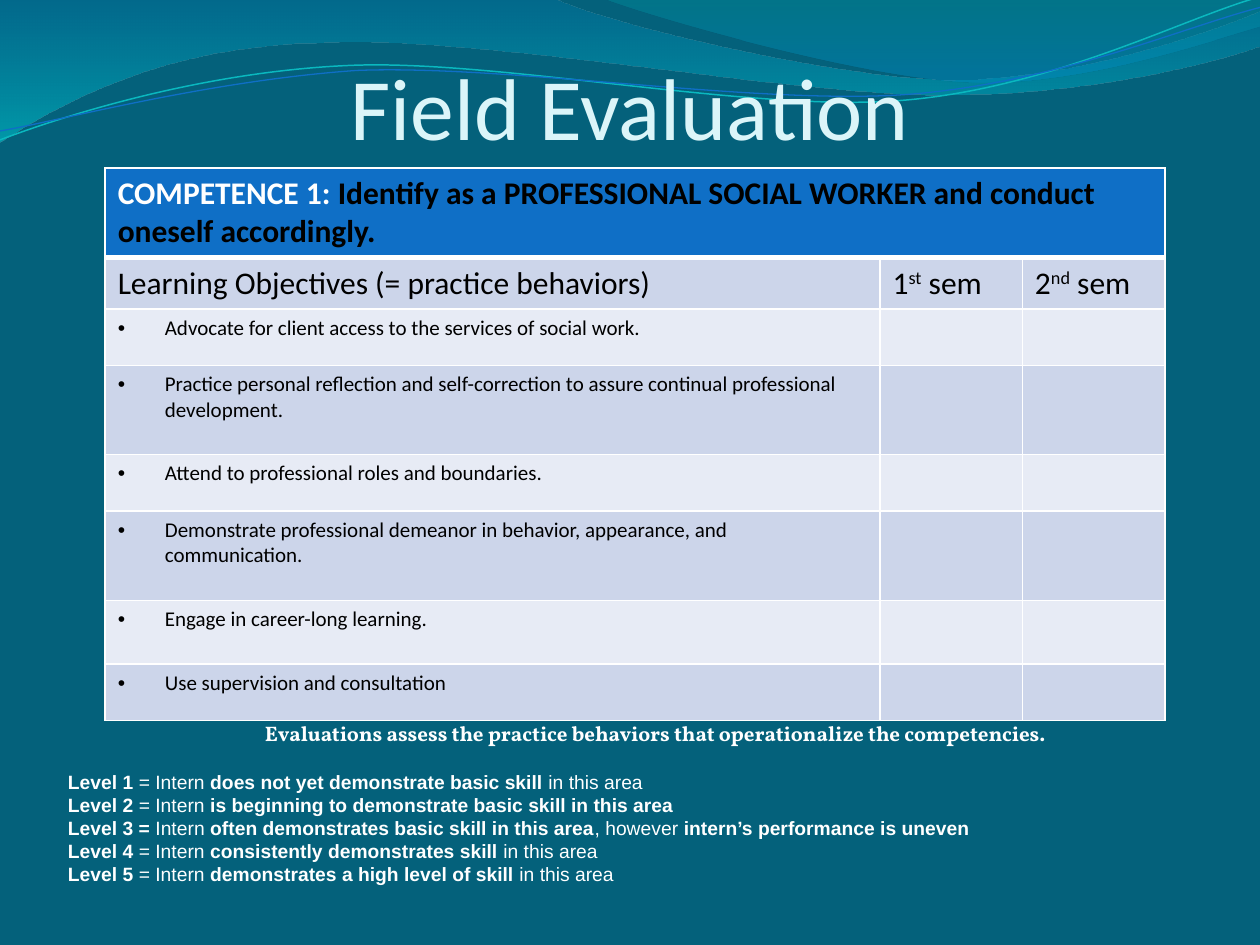
from dataclasses import dataclass
from math import cos, radians, sin
from typing import Optional

from lxml.etree import SubElement
from pptx import Presentation
from pptx.dml.color import RGBColor
from pptx.enum.text import MSO_ANCHOR, PP_ALIGN
from pptx.oxml import parse_xml
from pptx.oxml.ns import nsdecls, qn
from pptx.util import Cm, Pt

BACKGROUND = RGBColor(0x04, 0x61, 0x7B)
TITLE_TINT = RGBColor(0xDB, 0xF5, 0xF9)
BLUE = RGBColor(0x0F, 0x6F, 0xC6)
AQUA = RGBColor(0x0A, 0xB8, 0xBF)
DARK_BAND = RGBColor(0xCC, 0xD5, 0xEA)
LIGHT_BAND = RGBColor(0xE7, 0xEB, 0xF5)
WHITE = RGBColor(0xFF, 0xFF, 0xFF)
BLACK = RGBColor(0x00, 0x00, 0x00)
LINE_CENTER = (12.68, 1.48)
LINE_TILT = -2.7


@dataclass
class Stop:
    position: float
    color: RGBColor
    opacity: int


@dataclass
class Wave:
    """Segments hold x, y pairs in cm: one pair is a line, three are a Bézier curve."""
    start: tuple
    segments: list
    stops: Optional[list] = None
    line_color: Optional[RGBColor] = None
    line_width: float = 0


@dataclass
class Span:
    text: str
    bold: bool = False
    color: RGBColor = BLACK
    superscript: bool = False


WAVES = [
    Wave((0, -0.03), [
        (11.18, -0.03),
        (12.09, 0.43, 16.87, 1.6, 19.25, 1.6),
        (21.67, 1.6, 24.33, 0.66, 25.4, 0.23),
        (25.43, 0.91),
        (24.97, 1.12, 22.1, 1.93, 18.95, 1.91),
        (15.8, 1.91, 9.7, 0.71, 6.53, 0.86),
        (3.28, 0.89, 1.17, 2.11, -0.03, 2.87),
        (0, -0.03),
    ], stops=[Stop(0, RGBColor(0x00, 0x74, 0xA1), 45), Stop(1, RGBColor(0x00, 0xC6, 0xCF), 55)]),
    Wave((12.17, -0.03), [
        (12.93, 0.28, 17.32, 1.57, 19.53, 1.65),
        (21.74, 1.75, 24.41, 0.81, 25.4, 0.53),
        (25.4, 0),
        (12.17, -0.03),
    ], stops=[Stop(0, RGBColor(0x00, 0xA1, 0xA9), 30), Stop(0.8, RGBColor(0x00, 0x8B, 0xBF), 45)]),
    Wave((0, 2.82), [
        (1.22, 2.36, 4.01, 1.45, 7.04, 1.32),
        (10.03, 1.19, 15.06, 2.26, 18.11, 2.03),
        (21.16, 1.8, 23.83, 0.38, 25.35, -0.05),
    ], line_color=AQUA, line_width=0.85),
    Wave((0, 2.64), [
        (1.19, 2.44, 4.17, 1.63, 7.19, 1.42),
        (10.24, 1.3, 15.16, 2.11, 18.21, 1.91),
        (21.23, 1.7, 23.9, 0.53, 25.4, 0.15),
    ], line_color=BLUE, line_width=0.75),
]

COMPETENCE = [
    Span("COMPETENCE 1: ", True, WHITE),
    Span("Identify as a PROFESSIONAL SOCIAL WORKER and conduct oneself accordingly.", True),
]
HEADINGS = [
    [Span("Learning Objectives (= practice behaviors)")],
    [Span("1"), Span("st", superscript=True), Span(" sem")],
    [Span("2"), Span("nd", superscript=True), Span(" sem")],
]
OBJECTIVES = [
    "Advocate for client access to the services of social work.",
    "Practice personal reflection and self-correction to assure continual professional development.",
    "Attend to professional roles and boundaries.",
    "Demonstrate professional demeanor in behavior, appearance, and communication.",
    "Engage in career-long learning.",
    "Use supervision and consultation",
]
COLUMN_WIDTHS = [15.62, 2.87, 2.87]
ROW_HEIGHTS = [1.8, 1.02, 1.14, 1.8, 1.14, 1.8, 1.28, 1.14]

# Bold and regular pieces alternate, bold first
LEVELS = [
    ("Level 1", " = Intern ", "does not yet demonstrate basic skill ", "in this area"),
    ("Level 2", " = Intern ", "is beginning to demonstrate basic skill in this area"),
    ("Level 3 = ", "Intern ", "often demonstrates basic skill in this area", ", however ",
     "intern’s performance is uneven"),
    ("Level 4 ", "= Intern ", "consistently demonstrates skill ", "in this area"),
    ("Level 5 ", "= Intern ", "demonstrates a high level of skill ", "in this area"),
]


def turn(point: tuple, degrees: float) -> tuple:
    angle, (cx, cy) = radians(degrees), LINE_CENTER
    dx, dy = point[0] - cx, point[1] - cy
    return cx + dx * cos(angle) - dy * sin(angle), cy + dx * sin(angle) + dy * cos(angle)


def draw_wave(page, wave: Wave) -> None:
    points = [wave.start]
    for segment in wave.segments:
        points += zip(segment[::2], segment[1::2])
    tilt = 0 if wave.stops else LINE_TILT
    vertices = [(Cm(x), Cm(y)) for x, y in (turn(point, -tilt) for point in points)]
    builder = page.shapes.build_freeform(*vertices[0])
    builder.add_line_segments(vertices[1:], close=wave.stops is not None)
    shape = builder.convert_to_shape()
    shape.rotation = tilt
    shape.shadow.inherit = False

    # Join each three points of a curve into one Bézier segment
    steps = iter(list(shape._element.spPr.iter(qn("a:lnTo"))))
    for segment in wave.segments:
        step = next(steps)
        if len(segment) == 6:
            step.tag = qn("a:cubicBezTo")
            for _ in range(2):
                extra = next(steps)
                step.append(extra[0])
                extra.getparent().remove(extra)

    if wave.stops is None:
        shape.fill.background()
        shape.line.color.rgb = wave.line_color
        shape.line.width = Pt(wave.line_width)
        return
    shape.line.fill.background()
    shape.fill.gradient()
    shape.fill.gradient_angle = 270
    for gradient_stop, stop in zip(shape.fill.gradient_stops, wave.stops):
        gradient_stop.position = stop.position
        gradient_stop.color.rgb = stop.color
    for color, stop in zip(shape._element.spPr.iter(qn("a:srgbClr")), wave.stops):
        SubElement(color, qn("a:alpha")).set("val", str(stop.opacity * 1000))


def write_spans(para, spans: list, size: float, font_name: str) -> None:
    para.font.size, para.font.name = Pt(size), font_name
    for item in spans:
        span = para.add_run()
        span.text = item.text
        span.font.size, span.font.name = Pt(size), font_name
        span.font.bold, span.font.color.rgb = item.bold, item.color
        if item.superscript:
            span.font._element.set("baseline", "30000")


def set_indent(para, left: float, first: float, bullet: str = "") -> None:
    properties = para._p.get_or_add_pPr()
    properties.set("marL", str(Cm(left)))
    properties.set("indent", str(Cm(first)))
    if bullet:
        properties.insert(0, parse_xml(f'<a:buChar {nsdecls("a")} char="{bullet}"/>'))
        properties.insert(0, parse_xml(f'<a:buFont {nsdecls("a")} typeface="Arial"/>'))


def style_cell(cell, fill: RGBColor, bottom_width: float = 1) -> None:
    cell.fill.solid()
    cell.fill.fore_color.rgb = fill
    properties = cell._tc.get_or_add_tcPr()
    for index, side in enumerate("LRTB"):
        width = Pt(bottom_width if side == "B" else 1)
        properties.insert(index, parse_xml(
            f'<a:ln{side} {nsdecls("a")} w="{width}"><a:solidFill>'
            f'<a:srgbClr val="{WHITE}"/></a:solidFill></a:ln{side}>'))


def draw_table(page) -> None:
    frame = page.shapes.add_table(len(ROW_HEIGHTS), len(COLUMN_WIDTHS), Cm(2.12), Cm(3.39),
                                  Cm(sum(COLUMN_WIDTHS)), Cm(sum(ROW_HEIGHTS)))
    table = frame.table
    table.horz_banding = False
    for column, width in zip(table.columns, COLUMN_WIDTHS):
        column.width = Cm(width)
    for row, height in zip(table.rows, ROW_HEIGHTS):
        row.height = Cm(height)
    table.cell(0, 0).merge(table.cell(0, 2))

    rows = [[COMPETENCE, [], []], HEADINGS] + [[[Span(text)], [], []] for text in OBJECTIVES]
    for row_index, row in enumerate(rows):
        fill = BLUE if row_index == 0 else DARK_BAND if row_index % 2 else LIGHT_BAND
        for column_index, spans in enumerate(row):
            cell = table.cell(row_index, column_index)
            style_cell(cell, fill, 3 if row_index == 0 else 1)
            para = cell.text_frame.paragraphs[0]
            write_spans(para, spans, 18 if row_index < 2 else 12, "Calibri")
            if row_index > 1 and spans:
                set_indent(para, 0.95, -0.95, "•")


def draw_levels(page) -> None:
    box = page.shapes.add_textbox(Cm(0.54), Cm(14.4), Cm(24.77), Cm(4.83))
    frame = box.text_frame
    frame.word_wrap = True
    para = frame.paragraphs[0]
    para.alignment = PP_ALIGN.CENTER
    para.space_after = Pt(14)
    set_indent(para, 0.58, 0)
    write_spans(para, [Span("Evaluations assess the practice behaviors that operationalize the "
                            "competencies.", True, WHITE)], 12, "Vollkorn")
    for level in LEVELS:
        para = frame.add_paragraph()
        set_indent(para, 0.58, 0)
        spans = [Span(text, index % 2 == 0, WHITE) for index, text in enumerate(level)]
        write_spans(para, spans, 11, "Arial")


def draw_title(page) -> None:
    title = page.shapes.title
    title.left, title.top, title.width, title.height = Cm(1.27), Cm(0), Cm(22.86), Cm(3.18)
    frame = title.text_frame
    frame.margin_left = frame.margin_right = frame.margin_bottom = 0
    frame.vertical_anchor = MSO_ANCHOR.BOTTOM
    para = frame.paragraphs[0]
    para.alignment = PP_ALIGN.CENTER
    write_spans(para, [Span("Field Evaluation", color=TITLE_TINT)], 50, "Calibri")
    page.shapes._spTree.append(title._element)  # in front of the waves


def main() -> None:
    deck = Presentation()
    deck.slide_width, deck.slide_height = Cm(25.4), Cm(19.05)
    page = deck.slides.add_slide(deck.slide_layouts[5])
    page.background.fill.solid()
    page.background.fill.fore_color.rgb = BACKGROUND
    for wave in WAVES:
        draw_wave(page, wave)
    draw_title(page)
    draw_table(page)
    draw_levels(page)
    deck.save("out.pptx")


if __name__ == "__main__":
    main()
